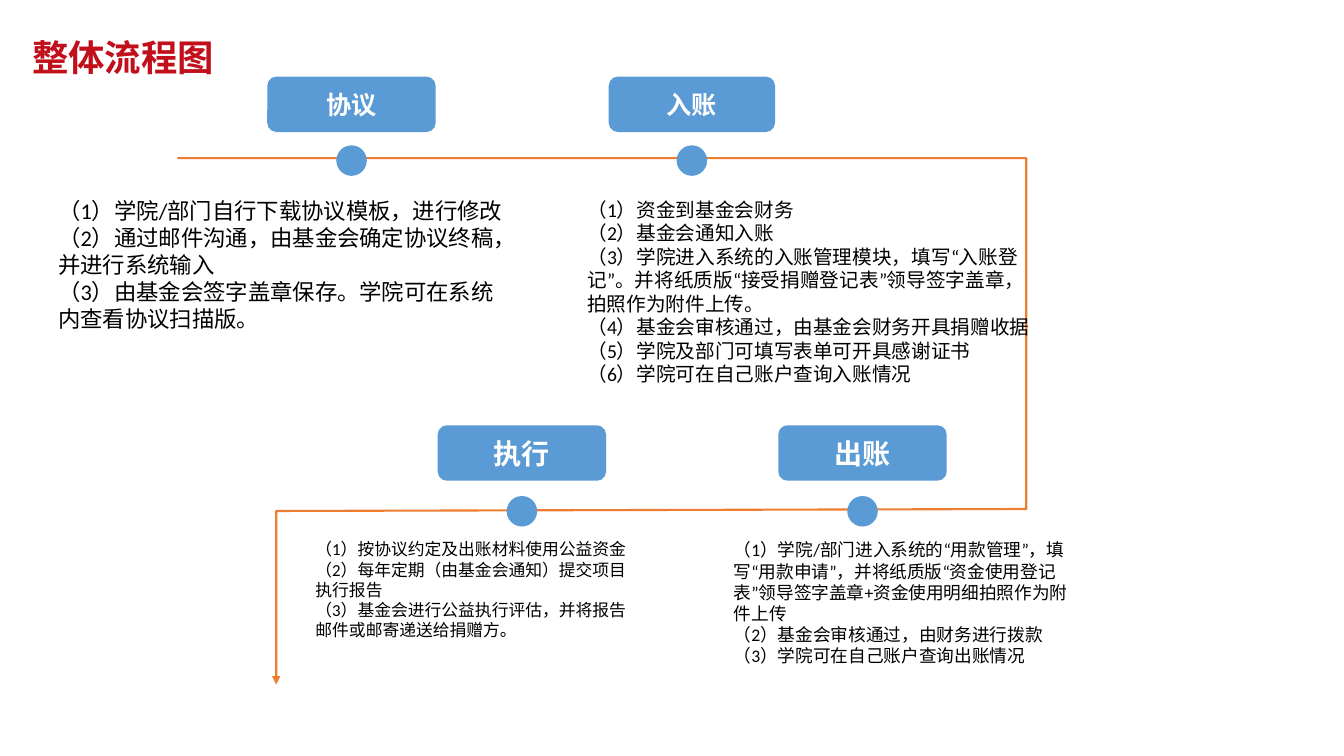
"""Build a slide with the four-step donation process flow."""
from lxml import etree
from pptx import Presentation
from pptx.dml.color import RGBColor
from pptx.enum.shapes import MSO_SHAPE
from pptx.enum.text import MSO_ANCHOR, PP_ALIGN
from pptx.oxml.ns import qn
from pptx.util import Pt

ROUNDED = MSO_SHAPE.ROUNDED_RECTANGLE
OVAL = MSO_SHAPE.OVAL
TOP = MSO_ANCHOR.TOP
MIDDLE = MSO_ANCHOR.MIDDLE
LEFT = PP_ALIGN.LEFT
CENTER = PP_ALIGN.CENTER

RED = RGBColor(0xC1, 0x0F, 0x1C)
BLUE = RGBColor(0x5B, 0x9B, 0xD5)
ORANGE = RGBColor(0xED, 0x7D, 0x31)
WHITE = RGBColor(0xFF, 0xFF, 0xFF)
BLACK = RGBColor(0, 0, 0)
SANS = "Noto Sans CJK SC"

TITLE = "整体流程图"
UPPER = {"label_top": 54.7, "dot_top": 103.8, "text_top": 137.5, "font": "Arial", "size": 18}
LOWER = {"label_top": 303.8, "dot_top": 354.3, "text_top": 381.6, "font": SANS, "size": 20}
STEPS = [
    {"name": "协议", "row": UPPER, "center": 251.1, "width": 120.3,
     "text_left": 34.5, "text_width": 339.1, "text_height": 141.8, "text_size": 16,
     "lines": ["（1）学院/部门自行下载协议模板，进行修改",
               "（2）通过邮件沟通，由基金会确定协议终稿，并进行系统输入",
               "（3）由基金会签字盖章保存。学院可在系统内查看协议扫描版。"]},
    {"name": "入账", "row": UPPER, "center": 494.2, "width": 118.8,
     "text_left": 412.5, "text_width": 331.2, "text_height": 131, "text_size": 14,
     "lines": ["（1）资金到基金会财务",
               "（2）基金会通知入账",
               "（3）学院进入系统的入账管理模块，填写“入账登记”。并将纸质版“接受捐赠登记表”领导签字盖章，拍照作为附件上传。",
               "（4）基金会审核通过，由基金会财务开具捐赠收据",
               "（5）学院及部门可填写表单可开具感谢证书",
               "（6）学院可在自己账户查询入账情况"]},
    {"name": "执行", "row": LOWER, "center": 372.8, "width": 120.3,
     "text_left": 218.2, "text_width": 236.9, "text_height": 107.3, "text_size": 12,
     "lines": ["（1）按协议约定及出账材料使用公益资金",
               "（2）每年定期（由基金会通知）提交项目执行报告",
               "（3）基金会进行公益执行评估，并将报告邮件或邮寄递送给捐赠方。"]},
    {"name": "出账", "row": LOWER, "center": 616.1, "width": 120.3,
     "text_left": 517, "text_width": 259.9, "text_height": 107.3, "text_size": 12.6,
     "lines": ["（1）学院/部门进入系统的“用款管理”，填写“用款申请”，并将纸质版“资金使用登记表”领导签字盖章+资金使用明细拍照作为附件上传",
               "（2）基金会审核通过，由财务进行拨款",
               "（3）学院可在自己账户查询出账情况"]},
]
FLOW_POINTS = [(126.7, 113), (733, 113), (733, 363.6), (197.3, 365), (197.3, 488.9)]
LABEL_HEIGHT = 39.6
DOT_SIZE = 21.8


def write_lines(shape, lines, font_name, size, color, bold=False, align=LEFT, anchor=TOP):
    frame = shape.text_frame
    frame.word_wrap = True
    frame.vertical_anchor = anchor
    for index, line in enumerate(lines):
        paragraph = frame.add_paragraph() if index else frame.paragraphs[0]
        paragraph.alignment = align
        run = paragraph.add_run()
        run.text = line
        run.font.size = Pt(size)
        run.font.bold = bold
        run.font.color.rgb = color
        run.font.name = font_name
        east_asian = etree.SubElement(run.font._element, qn("a:ea"))
        east_asian.set("typeface", font_name)


def add_text(slide, box, *args, **options):
    shape = slide.shapes.add_textbox(*map(Pt, box))
    write_lines(shape, *args, **options)


def add_blue_shape(slide, kind, box):
    shape = slide.shapes.add_shape(kind, *map(Pt, box))
    shape.shadow.inherit = False
    shape.fill.solid()
    shape.fill.fore_color.rgb = BLUE
    shape.line.fill.background()
    return shape


def add_flow_line(slide):
    start, *rest = [(Pt(x), Pt(y)) for x, y in FLOW_POINTS]
    builder = slide.shapes.build_freeform(*start)
    builder.add_line_segments(rest, close=False)
    shape = builder.convert_to_shape()
    shape.shadow.inherit = False
    shape.fill.background()
    shape.line.color.rgb = ORANGE
    shape.line.width = Pt(1.5)
    etree.SubElement(shape.line._get_or_add_ln(), qn("a:tailEnd")).set("type", "triangle")


def add_step(slide, step):
    row, center, width = step["row"], step["center"], step["width"]
    add_blue_shape(slide, OVAL, (center - DOT_SIZE / 2, row["dot_top"], DOT_SIZE, DOT_SIZE))
    label = add_blue_shape(slide, ROUNDED, (center - width / 2, row["label_top"], width, LABEL_HEIGHT))
    frame = label.text_frame
    frame.margin_left = frame.margin_right = frame.margin_top = frame.margin_bottom = 0
    write_lines(label, [step["name"]], row["font"], row["size"], WHITE,
                bold=True, align=CENTER, anchor=MIDDLE)
    text_box = (step["text_left"], row["text_top"], step["text_width"], step["text_height"])
    add_text(slide, text_box, step["lines"], "Calibri", step["text_size"], BLACK)


def main():
    presentation = Presentation()
    presentation.slide_width = Pt(960)
    presentation.slide_height = Pt(540)
    slide = presentation.slides.add_slide(presentation.slide_layouts[6])
    add_text(slide, (15.8, 21, 713.5, 38.9), [TITLE], SANS, 26, RED, bold=True, anchor=MIDDLE)
    add_flow_line(slide)
    for step in STEPS:
        add_step(slide, step)
    presentation.save("out.pptx")


if __name__ == "__main__":
    main()
